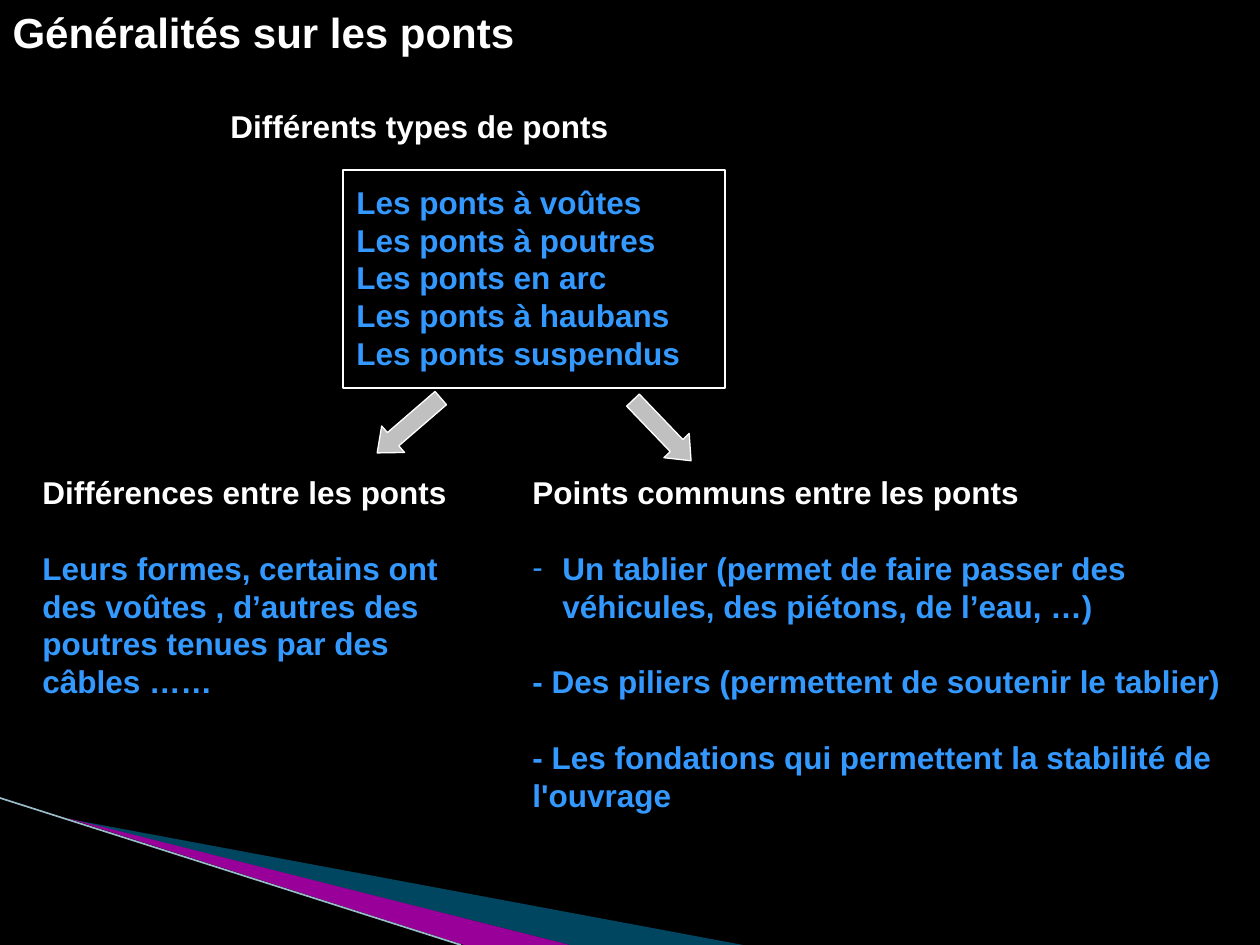
from dataclasses import dataclass

from lxml.etree import SubElement
from pptx import Presentation
from pptx.dml.color import RGBColor
from pptx.enum.shapes import MSO_CONNECTOR, MSO_SHAPE
from pptx.enum.text import MSO_ANCHOR, MSO_AUTO_SIZE, PP_ALIGN
from pptx.oxml.ns import qn
from pptx.util import Emu, Pt

PX_PER_INCH = 126
BLACK = RGBColor(0x00, 0x00, 0x00)
WHITE = RGBColor(0xFF, 0xFF, 0xFF)
BLUE = RGBColor(0x33, 0x99, 0xFF)
GREY = RGBColor(0xC0, 0xC0, 0xC0)
CYAN = RGBColor(0x00, 0xB0, 0xF0)
PURPLE = RGBColor(0x99, 0x00, 0x99)
PALE_BLUE = RGBColor(0x9A, 0xBC, 0xC9)

FONT = "Arial"
BODY_SIZE = 18
LINE_FACTOR = 1.2


@dataclass(frozen=True)
class Box:
    left: int
    top: int
    width: int
    height: int


@dataclass(frozen=True)
class Line:
    text: str
    color: RGBColor = BLUE
    gap: bool = False
    indent: int = 0
    bullet: str = ""


@dataclass(frozen=True)
class Panel:
    box: Box
    lines: tuple[Line, ...]


@dataclass(frozen=True)
class Wedge:
    points: tuple[tuple[int, int], ...]
    color: RGBColor
    opacity: int = 100


@dataclass(frozen=True)
class Arrow:
    box: Box
    rotation: float


WEDGES = (
    Wedge(((69, 819), (743, 945), (570, 945)), CYAN, 40),
    Wedge(((67, 818), (570, 945), (464, 945)), PURPLE),
)
TITLE_BOX = Box(0, 0, 591, 63)
TYPES_FRAME = Box(343, 170, 382, 218)
ARROWS = (
    Arrow(Box(620, 413, 84, 35), 46.2),
    Arrow(Box(367, 408, 84, 35), 139.2),
)

TYPES = ("à voûtes", "à poutres", "en arc", "à haubans", "suspendus")
PANELS = (
    Panel(Box(218, 101, 491, 277), (
        Line("Différents types de ponts", WHITE),
        *(Line(f"Les ponts {kind}", gap=index == 0, indent=126)
          for index, kind in enumerate(TYPES)),
    )),
    Panel(Box(30, 467, 437, 239), (
        Line("Différences entre les ponts", WHITE),
        Line("Leurs formes, certains ont des voûtes , d’autres des "
             "poutres tenues par des câbles ……", gap=True),
    )),
    Panel(Box(520, 467, 740, 353), (
        Line("Points communs entre les ponts", WHITE),
        Line("Un tablier (permet de faire passer des véhicules, "
             "des piétons, de l’eau, …)", gap=True, indent=30, bullet="-"),
        Line("- Des piliers (permettent de soutenir le tablier)", gap=True),
        Line("- Les fondations qui permettent la stabilité de l'ouvrage",
             gap=True),
    )),
)


def px(value: int) -> Emu:
    return Emu(round(value * 914400 / PX_PER_INCH))


def bounds(box: Box) -> tuple[Emu, ...]:
    return px(box.left), px(box.top), px(box.width), px(box.height)


def prepare_frame(frame) -> None:
    frame.word_wrap = True
    frame.auto_size = MSO_AUTO_SIZE.NONE
    frame.vertical_anchor = MSO_ANCHOR.TOP


def write(paragraph, text: str, *, size: int = BODY_SIZE,
          color: RGBColor = BLUE, gap: bool = False,
          indent: int = 0, bullet: str = "") -> None:
    line_height = Pt(size * LINE_FACTOR)
    paragraph.alignment = PP_ALIGN.LEFT
    paragraph.line_spacing = line_height
    paragraph.space_before = line_height if gap else Pt(0)
    properties = paragraph._p.get_or_add_pPr()
    properties.set("marL", str(px(indent)))
    properties.set("indent", str(-px(indent) if bullet else 0))
    if bullet:
        SubElement(properties, qn("a:buFont")).set("typeface", FONT)
        SubElement(properties, qn("a:buChar")).set("char", bullet)
    run = paragraph.add_run()
    run.text = text
    run.font.name = FONT
    run.font.size = Pt(size)
    run.font.bold = True
    run.font.color.rgb = color


def add_panel(slide, panel: Panel) -> None:
    frame = slide.shapes.add_textbox(*bounds(panel.box)).text_frame
    prepare_frame(frame)
    for index, line in enumerate(panel.lines):
        paragraph = frame.add_paragraph() if index else frame.paragraphs[0]
        write(paragraph, line.text, color=line.color, gap=line.gap,
              indent=line.indent, bullet=line.bullet)


def add_wedge(slide, wedge: Wedge) -> None:
    start, *others = [(px(x), px(y)) for x, y in wedge.points]
    builder = slide.shapes.build_freeform(*start)
    builder.add_line_segments(others, close=True)
    shape = builder.convert_to_shape()
    shape.shadow.inherit = False
    shape.fill.solid()
    shape.fill.fore_color.rgb = wedge.color
    shape.line.fill.background()
    if wedge.opacity < 100:
        color = shape._element.spPr.find(f".//{qn('a:srgbClr')}")
        SubElement(color, qn("a:alpha")).set("val", str(wedge.opacity * 1000))


def add_outlined(slide, kind: MSO_SHAPE, box: Box):
    shape = slide.shapes.add_shape(kind, *bounds(box))
    shape.shadow.inherit = False
    shape.fill.background()
    shape.line.color.rgb = WHITE
    shape.line.width = Pt(0.75)
    return shape


def add_arrow(slide, arrow: Arrow) -> None:
    shape = add_outlined(slide, MSO_SHAPE.RIGHT_ARROW, arrow.box)
    shape.adjustments[0] = 0.5
    shape.adjustments[1] = 0.6
    shape.rotation = arrow.rotation
    shape.fill.solid()
    shape.fill.fore_color.rgb = GREY


def main() -> None:
    presentation = Presentation()
    presentation.slide_width = px(1260)
    presentation.slide_height = px(945)
    slide = presentation.slides.add_slide(presentation.slide_layouts[5])
    slide.background.fill.solid()
    slide.background.fill.fore_color.rgb = BLACK

    # Corner decoration
    for wedge in WEDGES:
        add_wedge(slide, wedge)
    edge = slide.shapes.add_connector(
        MSO_CONNECTOR.STRAIGHT, px(0), px(798), px(461), px(945))
    edge.line.color.rgb = PALE_BLUE
    edge.line.width = Pt(0.95)
    SubElement(edge._element.spPr, qn("a:effectLst"))

    # Title
    title = slide.shapes.title
    title.left, title.top, title.width, title.height = bounds(TITLE_BOX)
    prepare_frame(title.text_frame)
    write(title.text_frame.paragraphs[0], "Généralités sur les ponts",
          size=24, color=WHITE)

    # Text panels, then the arrows and frame linking them
    for panel in PANELS:
        add_panel(slide, panel)
    for arrow in ARROWS:
        add_arrow(slide, arrow)
    add_outlined(slide, MSO_SHAPE.RECTANGLE, TYPES_FRAME)

    presentation.save("out.pptx")


if __name__ == "__main__":
    main()
